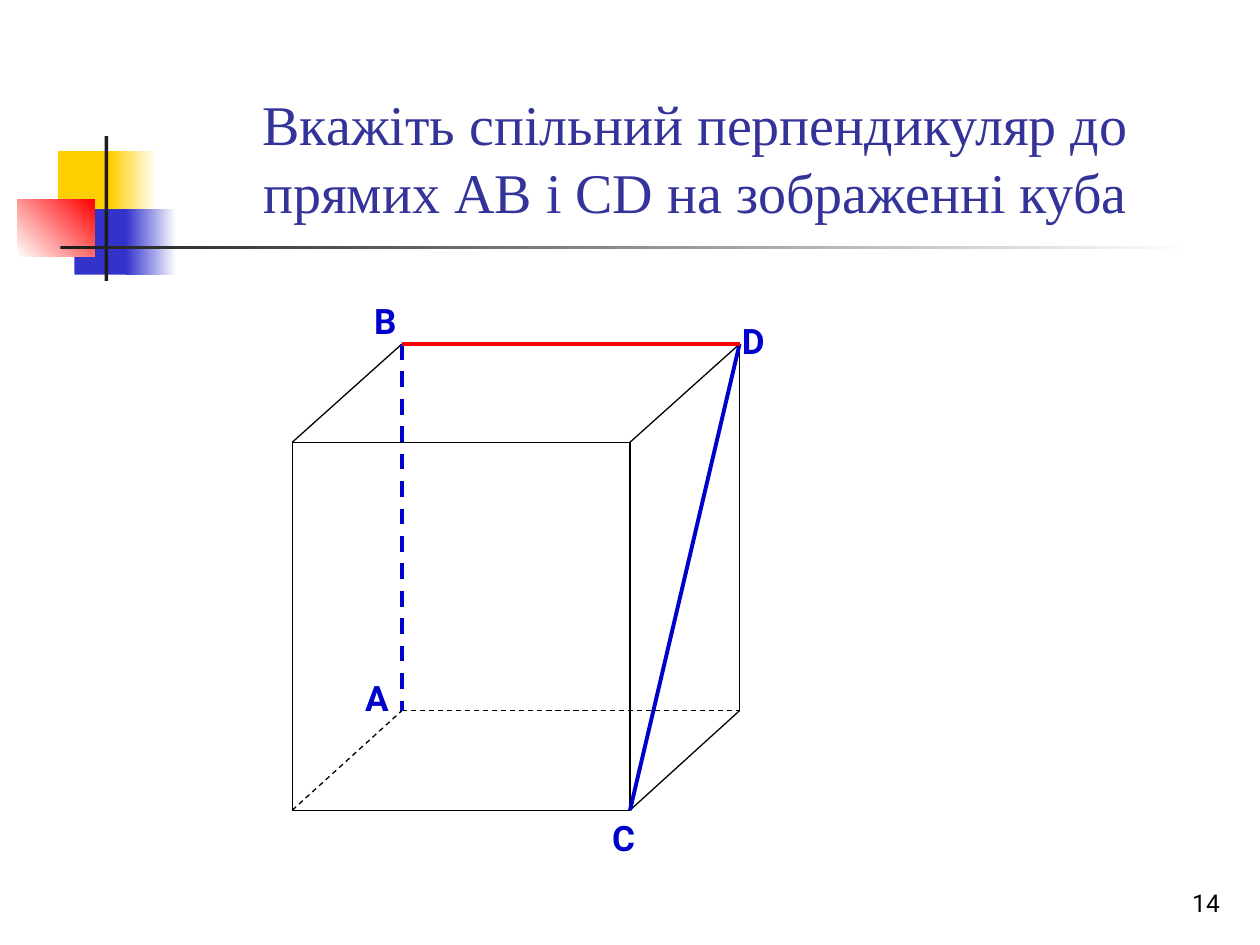
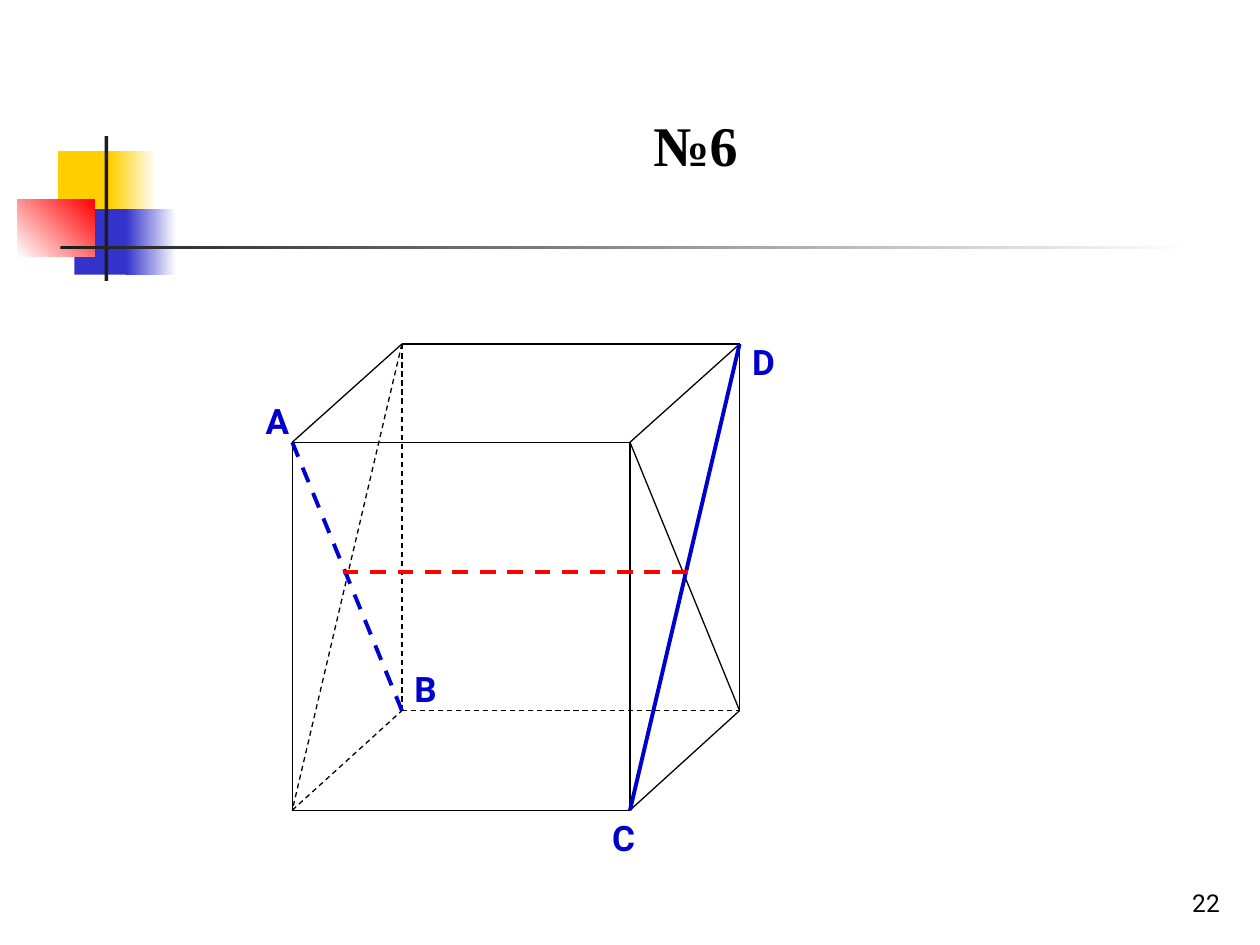
from itertools import product

from lxml import etree
from pptx import Presentation
from pptx.dml.color import RGBColor
from pptx.enum import dml, shapes, text
from pptx.oxml import ns
from pptx.util import Pt

SCALE = 9144
COLORS = {
    "white": "FFFFFF", "black": "000000", "ink": "1C1C1C", "yellow": "FFCF01",
    "indigo": "3333CC", "red": "FF0000", "blue": "0000CC", "title": "333399",
}
BODY, HEAD = "Roboto", "Times New Roman"

BAND = [
    ((46, 120, 48, 52), ("yellow",), 0),
    ((88, 120, 36, 52), ("yellow", "white"), 0),
    ((59, 166, 46, 52), ("indigo",), 0),
    ((100, 166, 40, 52), ("indigo", "white"), 0),
    ((14, 158, 61, 46), ("white", "red"), 45),
    ((83, 108, 3, 115), ("ink",), 0),
    ((48, 195, 900, 3), ("ink", "white"), 0),
]

FRONT = {"left": 232, "right": 500, "top": 351, "bottom": 643}
REAR = {"left": 319, "right": 587, "top": 273, "bottom": 564}
VERTICES = {
    f"{name} {y} {x}": (face[x], face[y])
    for (name, face), y, x in product(
        (("front", FRONT), ("rear", REAR)), ("top", "bottom"), ("left", "right"))
}
HIDDEN = "rear bottom left"
EDGES = [
    (a, b) for a, b in product(VERTICES, repeat=2)
    if a < b and sum(m != n for m, n in zip(a.split(), b.split())) == 1
]

SLIDES = [
    {
        "number": "14",
        "title": "Вкажіть спільний перпендикуляр до прямих АВ і СD на зображенні куба",
        "title_height": 160,
        "title_style": {"color": "title"},
        "labels": {"B": (287, 233, 39), "D": (579, 249, 39),
                   "A": (280, 532, 32), "C": (476, 643, 47)},
        "diagonals": [],
        "marked": [
            ("rear top left", HIDDEN, "blue", True),
            ("front bottom right", "rear top right", "blue", False),
            ("rear top left", "rear top right", "red", False),
        ],
        "perpendicular": None,
    },
    {
        "number": "22",
        "title": "№6",
        "title_height": 123,
        "title_style": {"bold": True},
        "labels": {"B": (319, 525, 39), "D": (587, 265, 39),
                   "A": (201, 312, 32), "C": (476, 643, 47)},
        "diagonals": [
            ("front top right", "rear bottom right", False),
            ("rear top left", "front bottom left", True),
        ],
        "marked": [
            ("rear top right", "front bottom right", "blue", False),
            ("front top left", HIDDEN, "blue", True),
        ],
        "perpendicular": ((272, 454), (547, 454)),
    },
]


def rgb(name):
    return RGBColor.from_string(COLORS[name])


class Deck:
    def __init__(self, width, height):
        self.prs = Presentation()
        self.prs.slide_width = width * SCALE
        self.prs.slide_height = height * SCALE
        self.s = None

    def new_slide(self):
        self.s = self.prs.slides.add_slide(self.prs.slide_layouts[6])

    def rect(self, box, colors, angle):
        sp = self.s.shapes.add_shape(
            shapes.MSO_SHAPE.RECTANGLE, *(v * SCALE for v in box))
        sp.shadow.inherit = False
        sp.line.fill.background()
        if len(colors) == 1:
            sp.fill.solid()
            sp.fill.fore_color.rgb = rgb(colors[0])
            return
        sp.fill.gradient()
        sp.fill.gradient_angle = angle
        for position, (stop, color) in enumerate(zip(sp.fill.gradient_stops, colors)):
            stop.color.rgb = rgb(color)
            stop.position = position

    def textbox(self, box, words, size, color="black", name=BODY, bold=False,
                align="LEFT", anchor="BOTTOM", fit="NONE"):
        tf = self.s.shapes.add_textbox(*(v * SCALE for v in box)).text_frame
        frame = {"word_wrap": True,
                 "vertical_anchor": text.MSO_ANCHOR[anchor],
                 "auto_size": text.MSO_AUTO_SIZE[fit]}
        for key, value in frame.items():
            setattr(tf, key, value)
        p = tf.paragraphs[0]
        p.alignment = text.PP_ALIGN[align]
        r = p.add_run()
        r.text = words
        for key, value in {"size": Pt(size), "name": name, "bold": bold}.items():
            setattr(r.font, key, value)
        r.font.color.rgb = rgb(color)

    def line(self, start, end, color="black", width=0.75, dashed=False):
        sp = self.s.shapes.add_connector(
            shapes.MSO_CONNECTOR.STRAIGHT, *(v * SCALE for v in start + end))
        sp.line.color.rgb = rgb(color)
        sp.line.width = Pt(width)
        if dashed:
            sp.line.dash_style = dml.MSO_LINE.DASH
        etree.SubElement(sp._element.spPr, ns.qn("a:effectLst"))

    def base(self, number, title, height, style):
        for box, colors, angle in BAND:
            self.rect(box, colors, angle)
        self.textbox((770, 683, 208, 50), number, 14, align="RIGHT")
        self.textbox((126, 23, 852, height), title, 32, name=HEAD, align="CENTER", **style)

    def cube(self, diagonals, marked):
        covered = {frozenset(mark[:2]) for mark in marked}
        for a, b in EDGES:
            if frozenset((a, b)) not in covered:
                self.line(VERTICES[a], VERTICES[b], dashed=HIDDEN in (a, b))
        for a, b, dashed in diagonals:
            self.line(VERTICES[a], VERTICES[b], dashed=dashed)
        for a, b, color, dashed in marked:
            self.line(VERTICES[a], VERTICES[b], color, 2.25, dashed)

    def label(self, letter, left, top, width):
        self.textbox((left, top, width, 43), letter, 20, "blue", bold=True,
                     anchor="TOP", fit="SHAPE_TO_FIT_TEXT")


def main():
    deck = Deck(1000, 750)
    for page in SLIDES:
        deck.new_slide()
        deck.base(page["number"], page["title"], page["title_height"], page["title_style"])
        deck.cube(page["diagonals"], page["marked"])
        if page["perpendicular"]:
            deck.line(*page["perpendicular"], "red", 2.25, True)
        for letter, place in page["labels"].items():
            deck.label(letter, *place)
    deck.prs.save("out.pptx")


if __name__ == "__main__":
    main()
